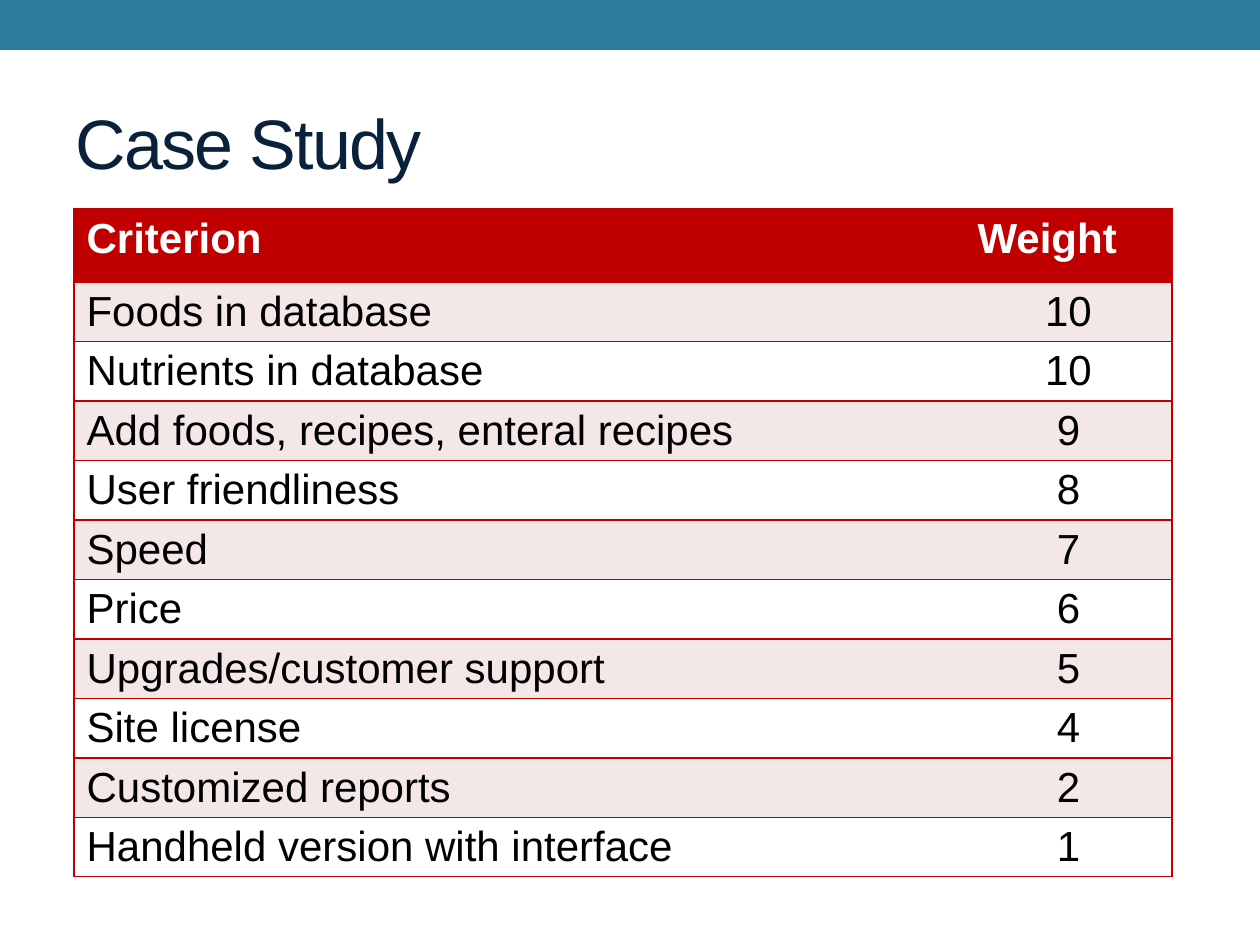
from dataclasses import dataclass

from pptx import Presentation
from pptx import util as u
from pptx.dml.color import RGBColor
from pptx.enum import shapes, text
from pptx.oxml.ns import qn
from lxml import etree

PX = u.Inches(1) // 126


@dataclass(frozen=True)
class Theme:
    font: str = "Arial"
    title_size: int = 40
    cell_size: int = 24
    banner: str = "2C7C9F"
    title: str = "09213B"
    accent: str = "C00000"
    band: str = "F4E7E7"
    plain: str = "FFFFFF"
    ink: str = "000000"


THEME = Theme()
HEADINGS = ("Criterion", "Weight")
CRITERIA = [
    ("Foods in database", 10),
    ("Nutrients in database", 10),
    ("Add foods, recipes, enteral recipes", 9),
    ("User friendliness", 8),
    ("Speed", 7),
    ("Price", 6),
    ("Upgrades/customer support", 5),
    ("Site license", 4),
    ("Customized reports", 2),
    ("Handheld version with interface", 1),
]


def to_emu(box):
    return [value * PX for value in box]


def style_span(span, size, color, bold=False):
    span.font.name = THEME.font
    span.font.size = u.Pt(size)
    span.font.bold = bold
    span.font.color.rgb = RGBColor.from_string(color)


def add_banner(page, box):
    banner = page.shapes.add_shape(shapes.MSO_SHAPE.RECTANGLE, *to_emu(box))
    banner.shadow.inherit = False
    banner.fill.solid()
    banner.fill.fore_color.rgb = RGBColor.from_string(THEME.banner)
    banner.line.fill.background()


def set_title(page, box, wording):
    title = page.shapes.title
    title.left, title.top, title.width, title.height = to_emu(box)
    frame = title.text_frame
    frame.text = wording
    frame.vertical_anchor = text.MSO_ANCHOR.MIDDLE
    frame.auto_size = text.MSO_AUTO_SIZE.NONE
    para = frame.paragraphs[0]
    para.alignment = text.PP_ALIGN.LEFT
    span = para.runs[0]
    style_span(span, THEME.title_size, THEME.title)
    span.font._element.set("spc", "-100")


def set_borders(cell, visible):
    """Draw the named sides (of L, R, T, B) and hide the others."""
    properties = cell._tc.get_or_add_tcPr()
    for side in "LRTB":
        line = etree.SubElement(properties, qn(f"a:ln{side}"), w=str(u.Pt(1)))
        if side in visible:
            fill = etree.SubElement(line, qn("a:solidFill"))
            etree.SubElement(fill, qn("a:srgbClr"), val=THEME.accent)
        else:
            etree.SubElement(line, qn("a:noFill"))


def fill_cell(cell, wording, fill, ink, bold, centred):
    cell.text = wording
    para = cell.text_frame.paragraphs[0]
    para.alignment = text.PP_ALIGN.CENTER if centred else text.PP_ALIGN.LEFT
    style_span(para.runs[0], THEME.cell_size, ink, bold)
    cell.fill.solid()
    cell.fill.fore_color.rgb = RGBColor.from_string(fill)


def add_weight_table(page, box, weight_width, header_height):
    left, top, width, height = box
    rows = [HEADINGS, *CRITERIA]
    table = page.shapes.add_table(len(rows), len(HEADINGS), *to_emu(box)).table
    table.columns[0].width = (width - weight_width) * PX
    table.columns[1].width = weight_width * PX
    row_height = (height - header_height) // len(CRITERIA)
    for r, values in enumerate(rows):
        header = r == 0
        table.rows[r].height = (header_height if header else row_height) * PX
        fill = THEME.accent if header else (THEME.plain, THEME.band)[r % 2]
        ink = THEME.plain if header else THEME.ink
        for c, value in enumerate(values):
            cell = table.cell(r, c)
            set_borders(cell, "LTB" if c == 0 else "RTB")
            fill_cell(cell, str(value), fill, ink, header, c == 1 and not header)


def main():
    deck = Presentation()
    deck.slide_width, deck.slide_height = to_emu((1260, 945))
    page = deck.slides.add_slide(deck.slide_layouts[5])
    add_banner(page, (0, 0, 1260, 50))
    set_title(page, (63, 73, 1134, 136), "Case Study")
    add_weight_table(page, (74, 209, 1098, 668), weight_width=207, header_height=73)
    deck.save("out.pptx")


if __name__ == "__main__":
    main()
